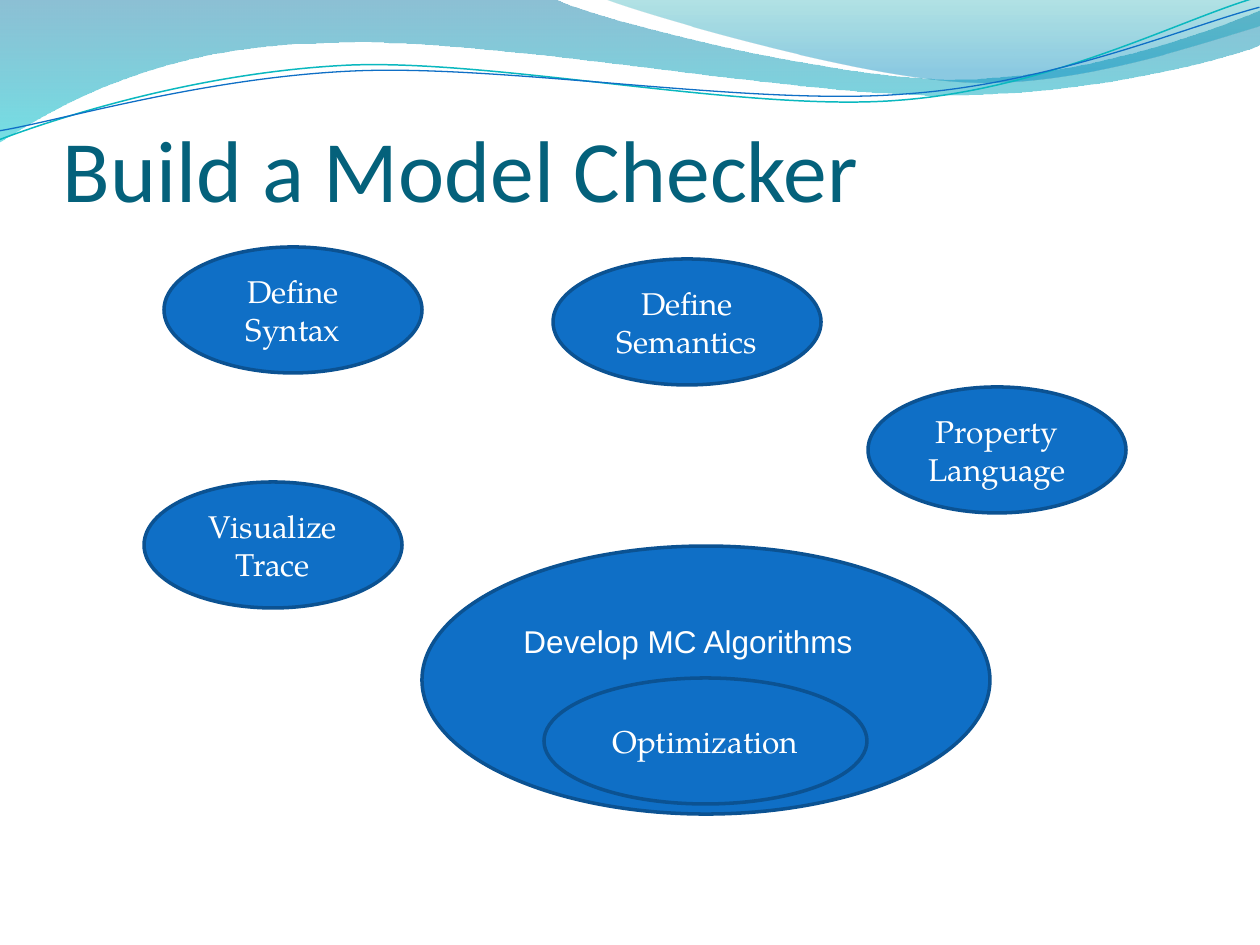
from lxml import etree
from pptx import Presentation
from pptx import util as u
from pptx.dml.color import RGBColor
from pptx.enum import shapes, text
from pptx.oxml import ns

PX = 914400 / 126  # EMU per pixel

BLUE = RGBColor(0x0F, 0x6F, 0xC6)
DARK_BLUE = RGBColor(0x0B, 0x52, 0x92)
TEAL = RGBColor(0x0A, 0xB8, 0xBF)
TITLE_COLOR = RGBColor(0x04, 0x61, 0x7B)
WHITE = RGBColor(0xFF, 0xFF, 0xFF)
BAND_TOP = RGBColor(0x00, 0x74, 0xA1)
BAND_BOTTOM = RGBColor(0x00, 0xC6, 0xCF)
CREST_TOP = RGBColor(0x00, 0xA1, 0xA9)
CREST_BOTTOM = RGBColor(0x00, 0x8B, 0xBF)

presentation = Presentation()
presentation.slide_width = u.Emu(round(1260 * PX))
presentation.slide_height = u.Emu(round(945 * PX))
slide = presentation.slides.add_slide(presentation.slide_layouts[6])


def draw_outline(start, parts, close):
    """Each part is one end point (line) or three points (cubic curve)."""
    builder = slide.shapes.build_freeform(*start, scale=PX)
    builder.add_line_segments([point for part in parts for point in part], close=close)
    shape = builder.convert_to_shape()
    shape.shadow.inherit = False
    segments = iter(list(shape._element.iter(ns.qn("a:lnTo"))))
    for part in parts:
        group = [next(segments) for _ in part]
        if len(group) == 3:
            curve = etree.Element(ns.qn("a:cubicBezTo"))
            group[0].addprevious(curve)
            for segment in group:
                curve.append(segment[0])
                segment.getparent().remove(segment)
    return shape


def write_text(shape, lines, font, size, color, align):
    frame = shape.text_frame
    frame.word_wrap = True
    frame.text = lines
    for paragraph in frame.paragraphs:
        paragraph.alignment = align
        for run in paragraph.runs:
            run.font.name = font
            run.font.size = u.Pt(size)
            run.font.color.rgb = color
    return frame


# Translucent wave bands: start, parts, (colour, position, opacity) stops
bands = [
    ((-1, 0),
     [[(554, -1)],
      [(600, 21), (837, 79), (955, 79)],
      [(1075, 79), (1207, 33), (1260, 11)],
      [(1261, 45)],
      [(1239, 55), (1096, 96), (940, 95)],
      [(784, 95), (481, 35), (324, 43)],
      [(163, 45), (58, 105), (-1, 142)]],
     [(BAND_TOP, 0, 45), (BAND_BOTTOM, 1, 55)]),
    ((604, -1),
     [[(641, 14), (859, 78), (969, 82)],
      [(1079, 87), (1211, 40), (1260, 26)],
      [(1260, 0)]],
     [(CREST_TOP, 0, 30), (CREST_BOTTOM, 0.8, 45)]),
]
for start, parts, stops in bands:
    band = draw_outline(start, parts, True)
    band.line.fill.background()
    band.fill.gradient()
    band.fill.gradient_angle = 270
    for stop, (color, position, _) in zip(band.fill.gradient_stops, stops):
        stop.color.rgb = color
        stop.position = position
    colors = band._element.spPr.iter(ns.qn("a:srgbClr"))
    for element, (_, _, opacity) in zip(colors, stops):
        etree.SubElement(element, ns.qn("a:alpha")).set("val", str(opacity * 1000))

# Thin wave lines, tilted as a whole
waves = [
    ((-3, 110),
     [[(59, 90), (200, 52), (350, 52)],
      [(498, 53), (745, 118), (897, 113)],
      [(1048, 109), (1184, 45), (1260, 27)]], TEAL, 0.85),
    ((-2, 101),
     [[(58, 94), (207, 57), (357, 58)],
      [(508, 59), (751, 112), (902, 107)],
      [(1052, 104), (1187, 53), (1262, 37)]], BLUE, 0.75),
]
for start, parts, color, width in waves:
    wave = draw_outline(start, parts, False)
    wave.rotation = 357.3
    wave.fill.background()
    wave.line.color.rgb = color
    wave.line.width = u.Pt(width)

# Title
title = slide.shapes.add_textbox(*(round(n * PX) for n in (63, 63, 1134, 157)))
frame = write_text(title, "Build a Model Checker", "Calibri", 50, TITLE_COLOR,
                   text.PP_ALIGN.LEFT)
frame.vertical_anchor = text.MSO_ANCHOR.BOTTOM
frame.margin_left = frame.margin_right = frame.margin_bottom = 0

# Task ellipses, back to front: label, left, top, width, height
ellipses = [
    ("Define Syntax", 164, 247, 258, 126),
    ("Define Semantics", 553, 259, 268, 126),
    ("Visualize\nTrace", 144, 482, 258, 126),
    ("", 422, 546, 568, 268),
    ("Optimization", 544, 678, 323, 126),
    ("Property\nLanguage", 868, 387, 258, 126),
]
for label, *box in ellipses:
    ellipse = slide.shapes.add_shape(shapes.MSO_SHAPE.OVAL, *(round(n * PX) for n in box))
    ellipse.shadow.inherit = False
    ellipse.fill.solid()
    ellipse.fill.fore_color.rgb = BLUE
    ellipse.line.color.rgb = DARK_BLUE
    ellipse.line.width = u.Pt(2)
    if label:
        frame = write_text(ellipse, label, "TeX Gyre Pagella", 18, WHITE,
                           text.PP_ALIGN.CENTER)
        frame.vertical_anchor = text.MSO_ANCHOR.MIDDLE

# Label of the large ellipse
algorithms = slide.shapes.add_textbox(*(round(n * PX) for n in (511, 616, 407, 50)))
frame = write_text(algorithms, "Develop MC Algorithms", "Arial", 18, WHITE,
                   text.PP_ALIGN.LEFT)
frame.auto_size = text.MSO_AUTO_SIZE.SHAPE_TO_FIT_TEXT

presentation.save("out.pptx")
